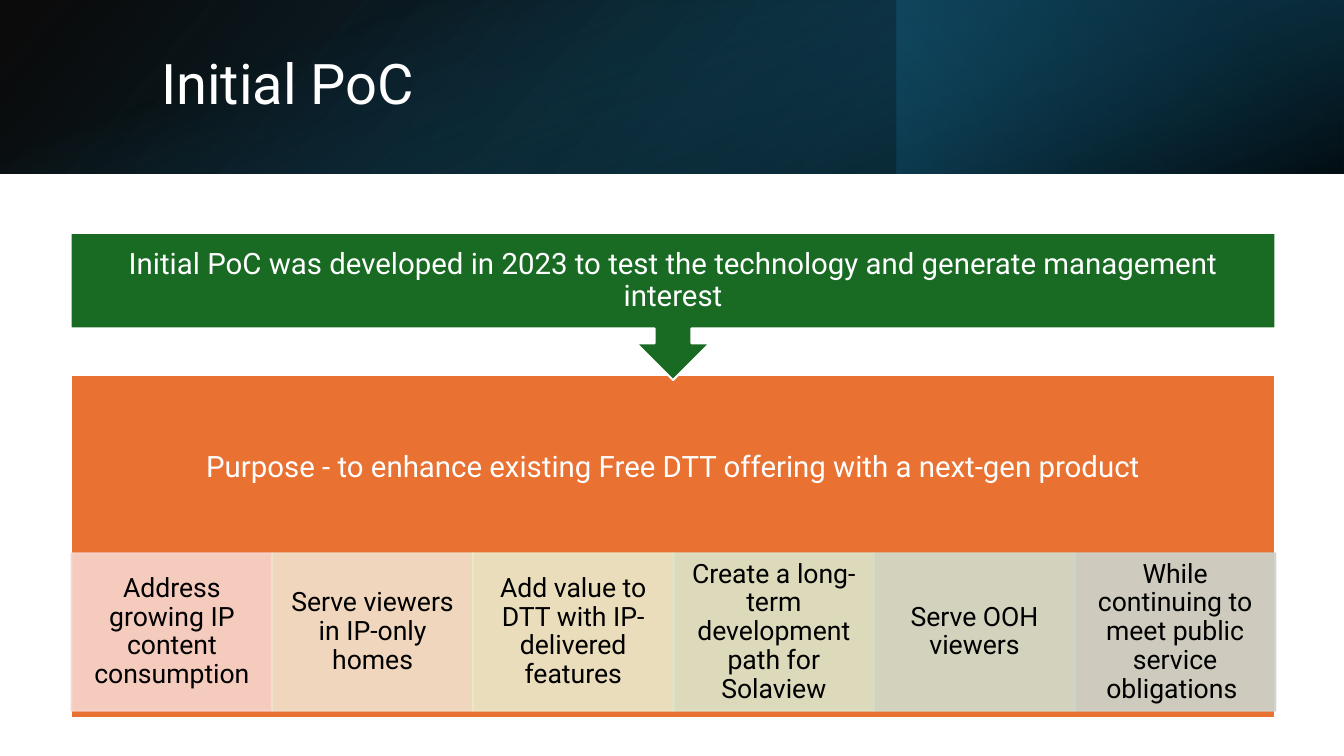
"""Build the Initial PoC slide: a gradient header above a two-step purpose diagram."""
from dataclasses import dataclass

from lxml import etree
from pptx import Presentation
from pptx import util as u
from pptx.dml.color import RGBColor
from pptx.enum import shapes, text
from pptx.oxml.ns import qn

PX = 9144


@dataclass(frozen=True)
class Theme:
    """Colours and type sizes of the slide."""
    font: str = "Roboto"
    title_size: int = 40
    step_size: int = 21
    goal_size: int = 19
    white: str = "FFFFFF"
    black: str = "000000"
    green: str = "196B24"
    orange: str = "E97132"
    teal: str = "156082"
    mid_teal: str = "104862"
    deep_teal: str = "0B3041"


THEME = Theme()
GOALS = [
    ("Address growing IP content consumption", "F7D5CE"),
    ("Serve viewers in IP-only homes", "F1E1CC"),
    ("Add value to DTT with IP-delivered features", "EBE9CA"),
    ("Create a long-term development path for Solaview", "DCE5CA"),
    ("Serve OOH viewers", "D1DDCB"),
    ("While continuing to meet public service obligations ", "CCD4CD"),
]


def rgb(value):
    """Turn a hex string into a colour."""
    return RGBColor.from_string(value)


def emu(*lengths):
    """Scale px lengths to EMU."""
    return [u.Emu(length * PX) for length in lengths]


def set_opacity(shape, *percents):
    """Give the colours of a shape, in order, their opacity."""
    for colour, percent in zip(shape._element.spPr.iter(qn("a:srgbClr")), percents):
        etree.SubElement(colour, qn("a:alpha")).set("val", str(percent * 1000))


def add_block(page, area, fill, line, kind=shapes.MSO_SHAPE.RECTANGLE):
    """Add a filled, outlined shape."""
    block = page.shapes.add_shape(kind, *emu(*area))
    block.shadow.inherit = False
    block.fill.solid()
    block.fill.fore_color.rgb = rgb(fill)
    block.line.color.rgb = rgb(line)
    block.line.width = u.Pt(1.5)
    return block


def add_glow(page, area, stops, angle, rotation=0, flipped=False):
    """Add a gradient layer; stops are (position, colour, opacity), angle is clockwise."""
    layer = page.shapes.add_shape(shapes.MSO_SHAPE.RECTANGLE, *emu(*area))
    layer.shadow.inherit = False
    layer.line.fill.background()
    layer.rotation = rotation
    layer.fill.gradient()
    layer.fill.gradient_angle = 360 - angle
    for stop, (position, colour, _) in zip(layer.fill.gradient_stops, stops):
        stop.position = position / 100
        stop.color.rgb = rgb(colour)
    set_opacity(layer, *(opacity for _, _, opacity in stops))
    if flipped:
        layer._element.spPr.get_or_add_xfrm().set("flipH", "1")


def write(shape, words, size, colour, align, insets):
    """Write one paragraph, vertically centred, into a shape."""
    frame = shape.text_frame
    frame.word_wrap = True
    frame.vertical_anchor = text.MSO_ANCHOR.MIDDLE
    across, down = emu(*insets)
    frame.margin_left = frame.margin_right = across
    frame.margin_top = frame.margin_bottom = down
    para = frame.paragraphs[0]
    para.text = words
    para.alignment = align
    para.line_spacing = 0.9
    para.font.name = THEME.font
    para.font.size = u.Pt(size)
    para.font.color.rgb = rgb(colour)


def add_label(page, area, words, size, align=text.PP_ALIGN.CENTER, insets=(16, 16)):
    """Add a white text box."""
    box = page.shapes.add_textbox(*emu(*area))
    write(box, words, size, THEME.white, align, insets)


def add_header(page):
    """Add the gradient band and the title."""
    add_glow(page, (0, 0, 1333, 172),
             [(0, THEME.black, 96), (100, THEME.mid_teal, 100)], 140, flipped=True)
    add_glow(page, (889, 0, 444, 172),
             [(19, THEME.deep_teal, 68), (100, THEME.teal, 79)], 320, rotation=180)
    add_glow(page, (580, -580, 172, 1333),
             [(23, THEME.teal, 0), (99, THEME.black, 74)], 340, rotation=90)
    add_label(page, (150, 38, 1098, 96), "Initial PoC", THEME.title_size,
              text.PP_ALIGN.LEFT, (10, 5))


def add_goals(page, left=71, top=549, width=199, height=156):
    """Add the row of goal cells."""
    for column, (words, tint) in enumerate(GOALS):
        cell = add_block(page, (left + column * width, top, width, height), tint, tint)
        set_opacity(cell, 90, 90)
        write(cell, words, THEME.goal_size, THEME.black, text.PP_ALIGN.CENTER, (15, 3))


def main():
    """Build and save the deck."""
    deck = Presentation()
    deck.slide_width, deck.slide_height = emu(1333, 750)
    page = deck.slides.add_slide(deck.slide_layouts[6])
    add_header(page)
    add_block(page, (70, 372, 1195, 340), THEME.orange, THEME.white)
    add_label(page, (70, 372, 1195, 184),
              "Purpose - to enhance existing Free DTT offering with a next-gen product",
              THEME.step_size)
    add_goals(page)
    callout = add_block(page, (70, 231, 1195, 146), THEME.green, THEME.white,
                        shapes.MSO_SHAPE.UP_ARROW_CALLOUT)
    callout.rotation = 180
    add_label(page, (70, 231, 1195, 95),
              "Initial PoC was developed in 2023 to test the technology "
              "and generate management interest", THEME.step_size)
    deck.save("out.pptx")


if __name__ == "__main__":
    main()
